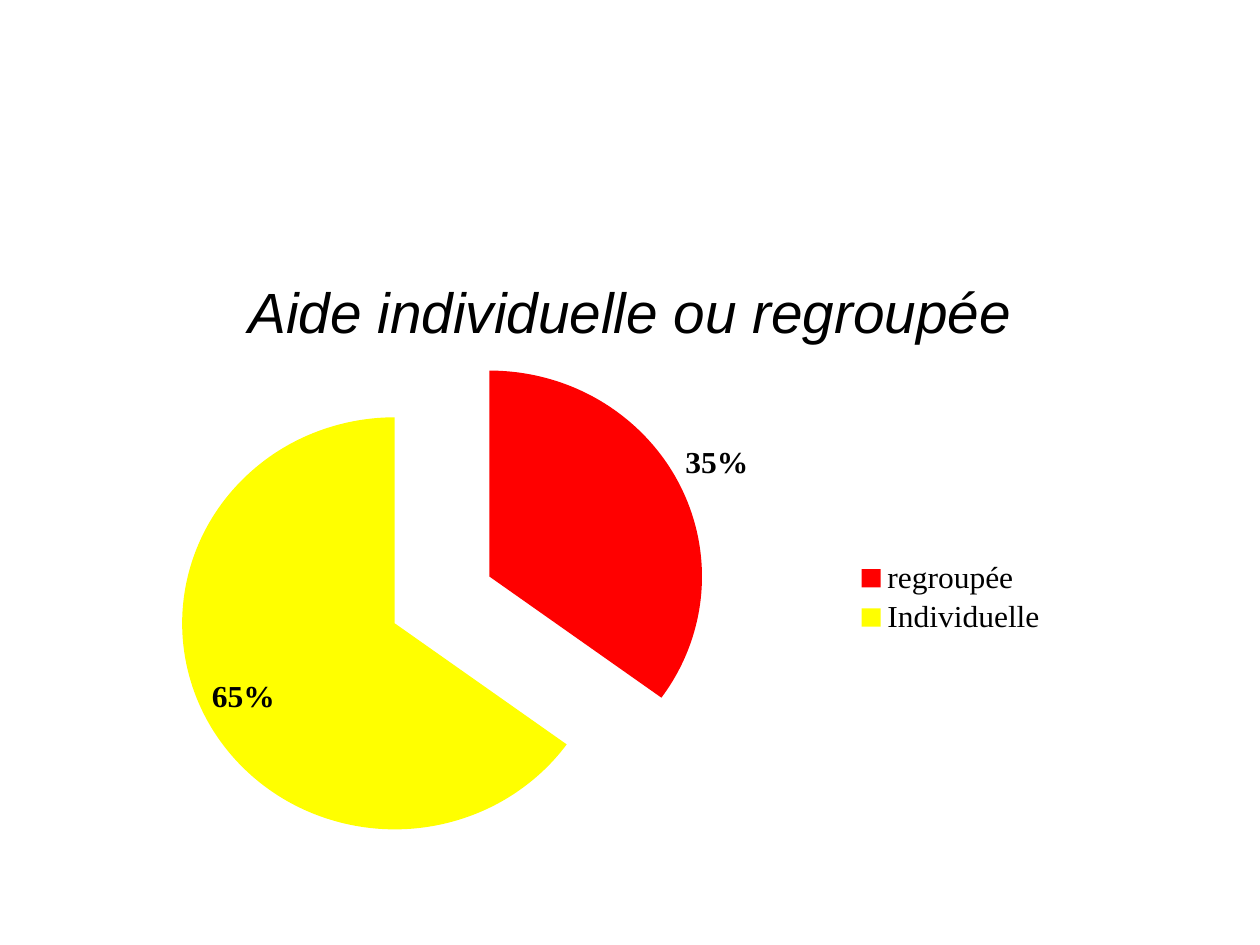
from dataclasses import dataclass

from lxml.etree import SubElement
from pptx import Presentation
from pptx.chart.data import CategoryChartData as Data
from pptx.dml.color import RGBColor as Rgb
from pptx.enum.chart import XL_CHART_TYPE as Kind
from pptx.enum.chart import XL_LABEL_POSITION as Spot
from pptx.enum.chart import XL_LEGEND_POSITION as Side
from pptx.enum.text import MSO_ANCHOR as Anchor
from pptx.enum.text import PP_ALIGN as Align
from pptx.oxml import parse_xml as to_xml
from pptx.oxml.ns import nsdecls, qn
from pptx.util import Cm, Pt


@dataclass(frozen=True)
class Theme:
    ink: str = "000000"
    shade: str = "808080"
    slices: tuple = ("FF0000", "FFFF00")
    head: str = "Arial"
    body: str = "Times New Roman"
    big: float = 32.4
    small: float = 18


class Deck:
    def __init__(self, theme):
        self.theme = theme
        self.prs = Presentation()
        self.prs.slide_width = Cm(25.4)
        self.prs.slide_height = Cm(19.05)
        self.slide = self.prs.slides.add_slide(self.prs.slide_layouts[5])

    def style(self, font, name, size, bold=False, slant=False):
        font.name = name
        font.size = Pt(size)
        font.bold = bold
        font.italic = slant
        font.color.rgb = Rgb.from_string(self.theme.ink)

    def title(self, text, box):
        shape = self.slide.shapes.title
        shape.left, shape.top, shape.width, shape.height = map(Cm, box)
        frame = shape.text_frame
        frame.word_wrap = True
        frame.vertical_anchor = Anchor.MIDDLE
        frame.margin_top = Cm(1.44)
        para = frame.paragraphs[0]
        para.alignment = Align.CENTER
        run = para.add_run()
        run.text = text
        self.style(para.font, self.theme.head, self.theme.big, slant=True)
        run.font._element.append(to_xml(
            f'<a:effectLst {nsdecls("a")}>'
            '<a:outerShdw dist="35921" dir="2700000" algn="ctr">'
            f'<a:srgbClr val="{self.theme.shade}"/></a:outerShdw></a:effectLst>'))

    def pie(self, names, vals, box, area, burst):
        data = Data(number_format="0%")
        data.categories = names
        data.add_series("Series 1", vals)
        frame = self.slide.shapes.add_chart(Kind.PIE, *map(Cm, box), data)
        chart = frame.chart
        chart.has_title = False
        self.style(chart.font, self.theme.body, self.theme.small)
        chart.has_legend = True
        chart.legend.position = Side.RIGHT
        chart.legend.include_in_layout = False
        plot = chart.plots[0]
        plot.vary_by_categories = True
        self.place(chart, area)
        row = plot.series[0]
        for i, hue in enumerate(self.theme.slices):
            fill = row.points[i].format.fill
            fill.solid()
            fill.fore_color.rgb = Rgb.from_string(hue)
            part = row.points[i].format.line
            part.fill.background()
            dot = row._element.findall(qn("c:dPt"))[i]
            gap = to_xml(f'<c:explosion {nsdecls("c")} val="{burst}"/>')
            dot.find(qn("c:spPr")).addprevious(gap)
        tags = row.data_labels
        tags.show_value = True
        tags.number_format = "0%"
        tags.number_format_is_linked = False
        tags.position = Spot.INSIDE_END
        self.style(tags.font, self.theme.body, self.theme.small, bold=True)
        first = row.points[0].data_label
        self.style(first.font, self.theme.body, self.theme.small, bold=True)
        first.position = Spot.OUTSIDE_END

    def place(self, chart, area):
        plot = chart._chartSpace.chart.plotArea
        old = plot.find(qn("c:layout"))
        if old is not None:
            plot.remove(old)
        lay = to_xml(f'<c:layout {nsdecls("c")}/>')
        plot.insert(0, lay)
        form = SubElement(lay, qn("c:manualLayout"))
        keys = ("layoutTarget", "xMode", "yMode", "x", "y", "w", "h")
        for key, val in zip(keys, ("inner", "edge", "edge", *area)):
            SubElement(form, qn(f"c:{key}")).set("val", str(val))

    def save(self):
        self.prs.save("out.pptx")


def main():
    deck = Deck(Theme())
    deck.title("Aide individuelle ou regroupée", (1.9, 4.01, 21.59, 3.18))
    deck.pie(("regroupée", "Individuelle"), (0.35, 0.65),
             (1.9, 7.47, 19.48, 9.25), (0.14, 0.04, 0.44, 0.93), 25)
    deck.save()


if __name__ == "__main__":
    main()
